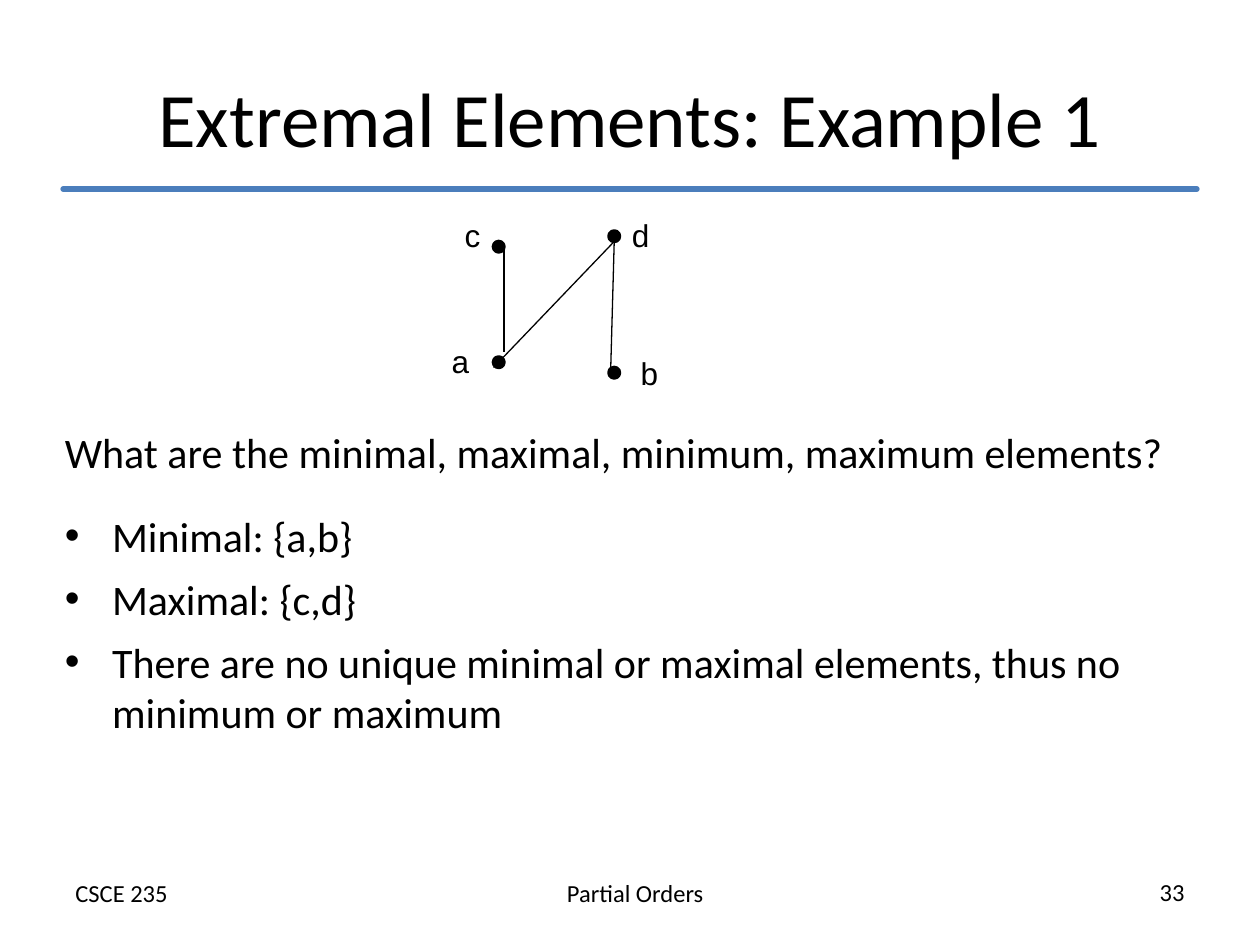
from lxml import etree
from pptx import Presentation
from pptx import util as u
from pptx.dml.color import RGBColor
from pptx.enum import shapes, text
from pptx.oxml.ns import qn

LEFT, CENTER, RIGHT = text.PP_ALIGN.LEFT, text.PP_ALIGN.CENTER, text.PP_ALIGN.RIGHT


def color(hex_value):
    return RGBColor.from_string(hex_value)


def write(frame, words, font="Calibri", size=24, ink="000000", align=LEFT,
          before=0, indent=0, bullet=None):
    paragraph = frame.paragraphs[0]
    paragraph.alignment = align
    paragraph.space_before = u.Pt(before)
    run = paragraph.add_run()
    run.text = words
    run.font.name = font
    run.font.size = u.Pt(size)
    run.font.color.rgb = color(ink)
    properties = paragraph._p.get_or_add_pPr()
    if indent:
        properties.set("marL", str(u.Pt(indent)))
        properties.set("indent", str(-u.Pt(indent)))
    if bullet:
        etree.SubElement(properties, qn("a:buFont")).set("typeface", "Arial")
        etree.SubElement(properties, qn("a:buChar")).set("char", bullet)


class Board:
    ink = "000000"
    accent = "4B7EBC"
    dot_size = 6

    def __init__(self, slide):
        self.slide = slide

    def label(self, words, left, top, width, height, wrap=True,
              anchor=text.MSO_ANCHOR.TOP, **style):
        box = self.slide.shapes.add_textbox(*map(u.Pt, (left, top, width, height)))
        box.text_frame.word_wrap = wrap
        box.text_frame.vertical_anchor = anchor
        write(box.text_frame, words, ink=self.ink, **style)

    def statement(self, words, top, height=42, bullet=None):
        self.label(words, 30, top, 648, height, before=4.8, indent=27, bullet=bullet)

    def line(self, start, end, ink=ink, weight=0.75, cap="flat"):
        edge = self.slide.shapes.add_connector(
            shapes.MSO_CONNECTOR.STRAIGHT, *map(u.Pt, (*start, *end)))
        edge.line.color.rgb = color(ink)
        edge.line.width = u.Pt(weight)
        edge.line._get_or_add_ln().set("cap", cap)
        etree.SubElement(edge._element.spPr, qn("a:effectLst"))

    def dot(self, left, top):
        vertex = self.slide.shapes.add_shape(
            shapes.MSO_SHAPE.OVAL, *map(u.Pt, (left, top, self.dot_size, self.dot_size)))
        vertex.shadow.inherit = False
        vertex.fill.solid()
        vertex.fill.fore_color.rgb = color(self.ink)
        vertex.line.color.rgb = color(self.ink)
        vertex.line.width = u.Pt(2)


def main():
    deck = Presentation()
    deck.slide_width, deck.slide_height = u.Pt(720), u.Pt(540)
    board = Board(deck.slides.add_slide(deck.slide_layouts[6]))

    footers = [("Partial Orders", 258, 498, CENTER),
               ("CSCE 235", 36, 498, LEFT),
               ("33", 474, 497.5, RIGHT)]
    for words, left, top, align in footers:
        board.label(words, left, top, 210, 24.5, size=14, align=align)

    board.line((36, 108), (684, 108), ink=board.accent, weight=3, cap="rnd")
    board.label("Extremal Elements: Example 1", 36, 21.6, 648, 90,
                anchor=text.MSO_ANCHOR.MIDDLE, size=44, align=CENTER)
    board.statement("What are the minimal, maximal, minimum, maximum elements?", 240)

    vertices = {"a": ((282, 204), (251, 192)),
                "b": ((348, 210), (359, 199)),
                "c": ((282, 138), (258.5, 120)),
                "d": ((348, 132), (354, 120))}
    for dot, _ in vertices.values():
        board.dot(*dot)

    edges = [((282, 210), (351, 138)),
             ((349, 211), (351, 138)),
             ((288, 201), (288, 141))]
    for start, end in edges:
        board.line(start, end)

    for name, (_, corner) in vertices.items():
        board.label(name, *corner, 24.5, 29, wrap=False, font="Arial", size=18)

    answers = ["Minimal: {a,b}",
               "Maximal: {c,d}",
               "There are no unique minimal or maximal elements, thus no minimum or maximum"]
    for row, (answer, height) in enumerate(zip(answers, (42, 42, 78))):
        board.statement(answer, 288 + 36 * row, height, bullet="•")

    deck.save("out.pptx")


if __name__ == "__main__":
    main()
